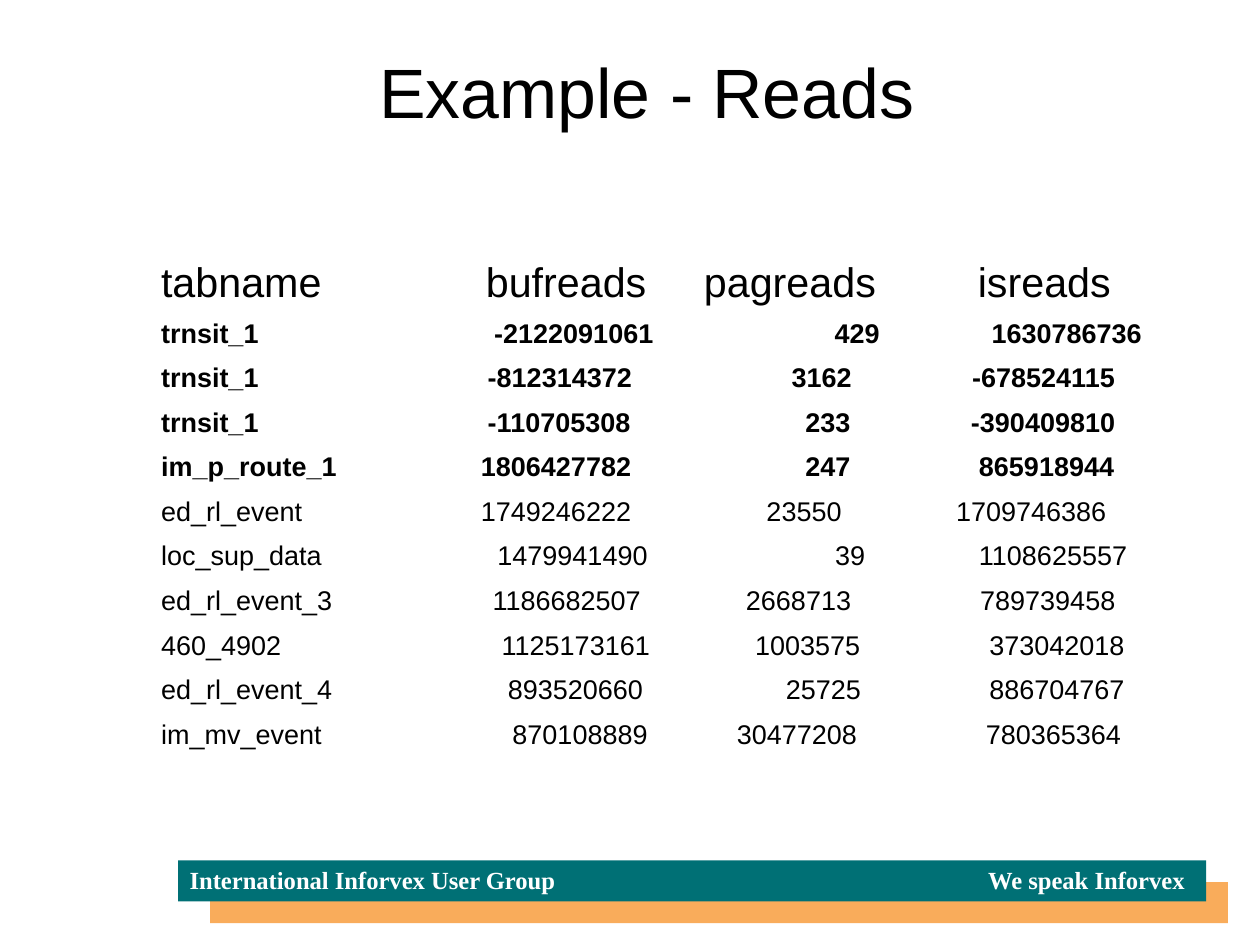
from pptx import Presentation
from pptx.dml.color import RGBColor
from pptx.enum.shapes import MSO_SHAPE
from pptx.enum.text import PP_ALIGN
from pptx.util import Emu, Pt

RECT = MSO_SHAPE.RECTANGLE
LEFT, RIGHT = PP_ALIGN.LEFT, PP_ALIGN.RIGHT
SCALE = 9144  # EMU per px, 100 px to the inch


def px(n):
    return Emu(n * SCALE)


def color(code):
    return RGBColor.from_string(code)


class Page:
    sans, serif = "Arial", "Times New Roman"
    black, white = "000000", "FFFFFF"
    teal, orange = "007075", "F9AC5B"

    def __init__(self, deck):
        self.slide = deck.slides.add_slide(deck.slide_layouts[6])
        self.shapes = self.slide.shapes

    def add_text(self, para, text, size, font, ink, bold=False):
        run = para.add_run()
        run.text = text
        run.font.size = Pt(size)
        run.font.name = font
        run.font.bold = bold
        run.font.color.rgb = color(ink)

    def band(self, x, y, w, h, fill):
        bar = self.shapes.add_shape(RECT, px(x), px(y), px(w), px(h))
        bar.shadow.inherit = False
        bar.fill.solid()
        bar.fill.fore_color.rgb = color(fill)
        bar.line.fill.background()

    def label(self, x, y, w, h, text, size, font, ink, bold=False, line=None):
        frame = self.shapes.add_textbox(px(x), px(y), px(w), px(h)).text_frame
        frame.word_wrap = True
        frame.margin_left = frame.margin_right = 0
        frame.margin_top = frame.margin_bottom = 0
        para = frame.paragraphs[0]
        if line:
            para.line_spacing = Pt(line)
        self.add_text(para, text, size, font, ink, bold)

    def cell(self, cell, text, inset, head, bold):
        # A negative inset is measured from the right edge
        cell.fill.background()
        cell.margin_left = px(max(inset, 0))
        cell.margin_right = px(max(-inset, 0))
        cell.margin_top = px(0 if head else 4)
        cell.margin_bottom = 0
        para = cell.text_frame.paragraphs[0]
        para.alignment = RIGHT if inset < 0 else LEFT
        if head:
            para.line_spacing = Pt(28.8)
        self.add_text(para, text, 26 if head else 17, self.sans, self.black, bold)

    def table(self, x, y, cols, tall, rows, strong):
        frame = self.shapes.add_table(len(rows), len(cols), px(x), px(y),
                                      px(sum(cols)), px(sum(tall)))
        grid = frame.table
        grid.first_row = grid.horz_banding = False
        for col, width in zip(grid.columns, cols):
            col.width = px(width)
        for r, (name, *items) in enumerate(rows):
            grid.rows[r].height = px(tall[r])
            for c, (text, inset) in enumerate([(name, 3), *items]):
                self.cell(grid.cell(r, c), text, inset, r == 0, r in strong)


# Each row: table name, then (value, inset) pairs
READS = [
    ("tabname", ("bufreads", -27), ("pagreads", -36), ("isreads", 53)),
    ("trnsit_1", ("-2122091061", -21), ("429", -33), ("1630786736", 65)),
    ("trnsit_1", ("-812314372", 69), ("3162", 100), ("-678524115", 48)),
    ("trnsit_1", ("-110705308", 69), ("233", 112), ("-390409810", 47)),
    ("im_p_route_1", ("1806427782", 63), ("247", 112), ("865918944", 54)),
    ("ed_rl_event", ("1749246222", 63), ("23550", 78), ("1709746386", 34)),
    ("loc_sup_data", ("1479941490", -26), ("39", 138), ("1108625557", 54)),
    ("ed_rl_event_3", ("1186682507", -32), ("2668713", 60), ("789739458", 55)),
    ("460_4902", ("1125173161", -24), ("1003575", 68), ("373042018", 63)),
    ("ed_rl_event_4", ("893520660", -30), ("25725", 95), ("886704767", 63)),
    ("im_mv_event", ("870108889", -26), ("30477208", 52), ("780365364", 60)),
]


def main():
    deck = Presentation()
    deck.slide_width, deck.slide_height = px(1103), px(827)
    page = Page(deck)

    # Footer bands
    page.band(184, 772, 891, 36, page.orange)
    page.band(156, 753, 900, 36, page.teal)

    # Title
    page.label(332, 43, 490, 76, "Example - Reads", 44, page.sans, page.black)

    # Footer texts
    for x, w, text in [(166, 340, "International Inforvex User Group"),
                       (865, 190, "We speak Inforvex")]:
        page.label(x, 758, w, 27, text, 15.5, page.serif, page.white, True, 17.9)

    # Reads per table, the first four in bold
    page.table(138, 228, [220, 235, 210, 200], [47] + [39] * 9 + [33],
               READS, range(1, 5))

    deck.save("out.pptx")


if __name__ == "__main__":
    main()
